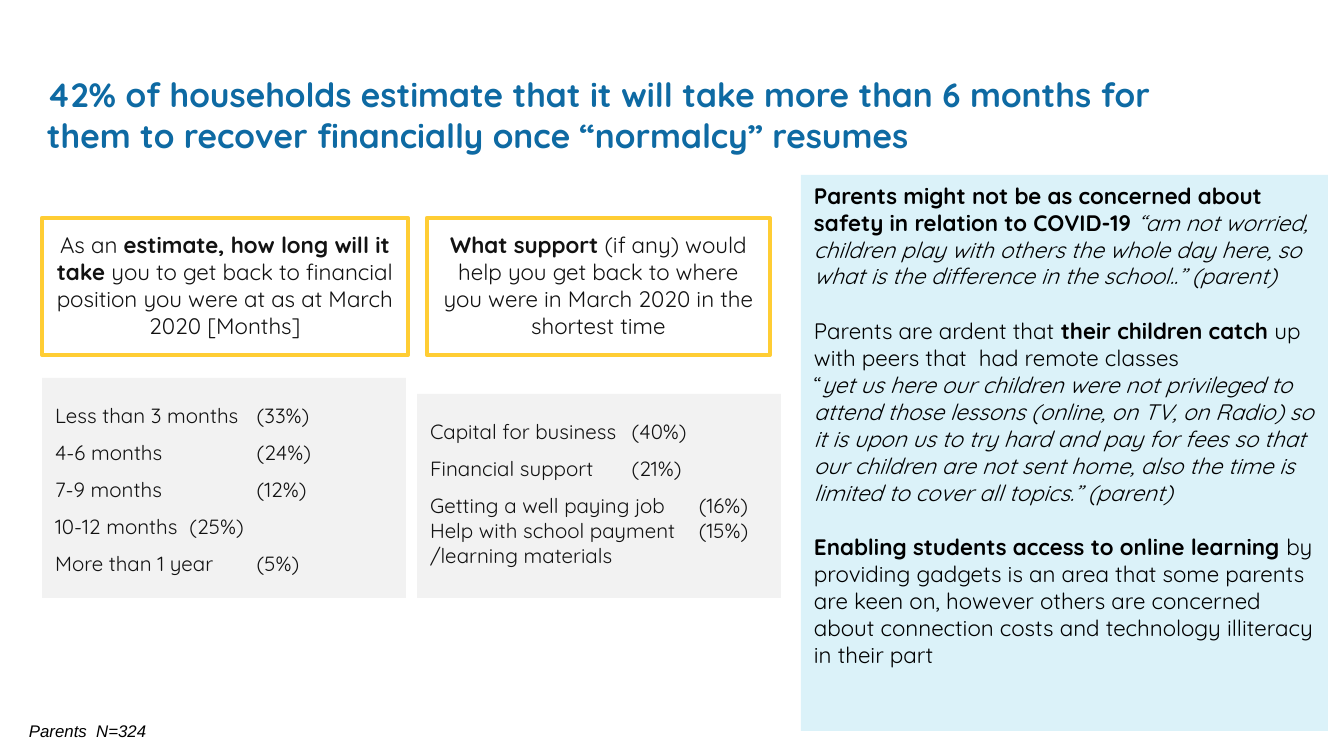
import pptx
import pptx.util
import pptx.dml.color
import pptx.enum.text
import pptx.enum.shapes

ALIGN = pptx.enum.text.PP_ALIGN
ANCHOR = pptx.enum.text.MSO_ANCHOR


def px(n):
    return pptx.util.Emu(round(n * 914400 / 134.4))


def rgb(h):
    return pptx.dml.color.RGBColor.from_string(h)


prs = pptx.Presentation()
prs.slide_width, prs.slide_height = px(1344), px(756)
s = prs.slides.add_slide(prs.slide_layouts[6])

title = [(0, 1, [("42% of households estimate that it will take more than 6 months for them to recover financially once “normalcy” resumes", "b")])]
support_question = [(0, 1, [
    ("What support ", "b"),
    ("(if any) would help you get back to where you were in March 2020 in the shortest time", ""),
])]
time_question = [(0, 1, [
    ("As an ", ""),
    ("estimate, how long will it take ", "b"),
    ("you to get back to financial position you were at as at March 2020 [Months]", ""),
])]
time_answers = [(0, 1.5, [(t, "")]) for t in (
    "Less than 3 months \t(33%)",
    "4-6 months\t\t(24%)",
    "7-9 months\t\t(12%)",
    "10-12 months\t(25%)",
    "More than 1 year \t(5%)",
)]
support_answers = [(0, ls, [(t, "")]) for t, ls in (
    ("Capital for business\t(40%)", 1.5),
    ("Financial support \t(21%)", 1.5),
    ("Getting a well paying job\t(16%)", 1.5),
    ("Help with school payment\t(15%)", 1),
    ("/learning materials", 1),
)]
comments = [
    (0, 1, [
        ("Parents might not be as concerned about safety in relation to COVID-19 ", "b"),
        ("“am not worried, children play with others the whole day here, so what is the difference in the school..” (parent)", "i"),
    ]),
    (15, 1, [
        ("Parents are ardent that ", ""),
        ("their children catch ", "b"),
        ("up with peers that  had remote classes", ""),
    ]),
    (0, 1, [
        ("“", ""),
        ("yet us here our children were not privileged to attend those lessons (online, on TV, on Radio) so it is upon us to try hard and pay for fees so that our children are not sent home, also the time is limited to cover all topics.” (parent)", "i"),
    ]),
    (15, 1, [
        ("Enabling students access to online learning ", "b"),
        ("by providing gadgets is an area that some parents are keen on, however others are concerned about connection costs and technology illiteracy in their part", ""),
    ]),
]
footnote = [(0, 1, [("Parents  N=324", "i")])]

boxes = [
    ((34, 55, 1211, 113), None, None, (13, 13), ANCHOR.BOTTOM, ALIGN.LEFT, "Quicksand", 18, "0E6AA3", title),
    ((427, 218, 343, 137), None, "FFCD34", (13, 0), ANCHOR.TOP, ALIGN.CENTER, "Quicksand", 12, "121212", support_question),
    ((42, 218, 366, 137), None, "FFCD34", (13, 0), ANCHOR.TOP, ALIGN.CENTER, "Quicksand", 12, "121212", time_question),
    ((42, 378, 364, 220), "F2F2F2", None, (13, 0), ANCHOR.TOP, ALIGN.LEFT, "Quicksand", 11, "121212", time_answers),
    ((417, 394, 364, 204), "F2F2F2", None, (13, 0), ANCHOR.TOP, ALIGN.LEFT, "Quicksand", 11, "121212", support_answers),
    ((801, 175, 527, 556), "DBF2F9", None, (7, 7), ANCHOR.TOP, ALIGN.LEFT, "Quicksand", 12, "000000", comments),
    ((16, 714, 380, 34), None, None, (7, 7), ANCHOR.TOP, ALIGN.LEFT, "Arial", 9, "000000", footnote),
]

for at, fill, line, (top, bottom), anchor, align, font, size, color, paragraphs in boxes:
    at = [px(n) for n in at]
    if fill or line:
        sp = s.shapes.add_shape(pptx.enum.shapes.MSO_SHAPE.RECTANGLE, *at)
        sp.shadow.inherit = False
        if fill:
            sp.fill.solid()
            sp.fill.fore_color.rgb = rgb(fill)
        else:
            sp.fill.background()
        if line:
            sp.line.color.rgb = rgb(line)
            sp.line.width = pptx.util.Pt(2.25)
        else:
            sp.line.fill.background()
    else:
        sp = s.shapes.add_textbox(*at)
    tf = sp.text_frame
    tf.word_wrap = True
    tf.vertical_anchor = anchor
    tf.margin_left = tf.margin_right = px(13)
    tf.margin_top, tf.margin_bottom = px(top), px(bottom)
    for i, (before, spacing, runs) in enumerate(paragraphs):
        p = tf.add_paragraph() if i else tf.paragraphs[0]
        p.alignment = align
        p.line_spacing = float(spacing)
        if before:
            p.space_before = pptx.util.Pt(before)
        for text, style in runs:
            r = p.add_run()
            r.text = text
            r.font.name = font
            r.font.size = pptx.util.Pt(size)
            r.font.bold = style == "b"
            r.font.italic = style == "i"
            r.font.color.rgb = rgb(color)

prs.save("out.pptx")
